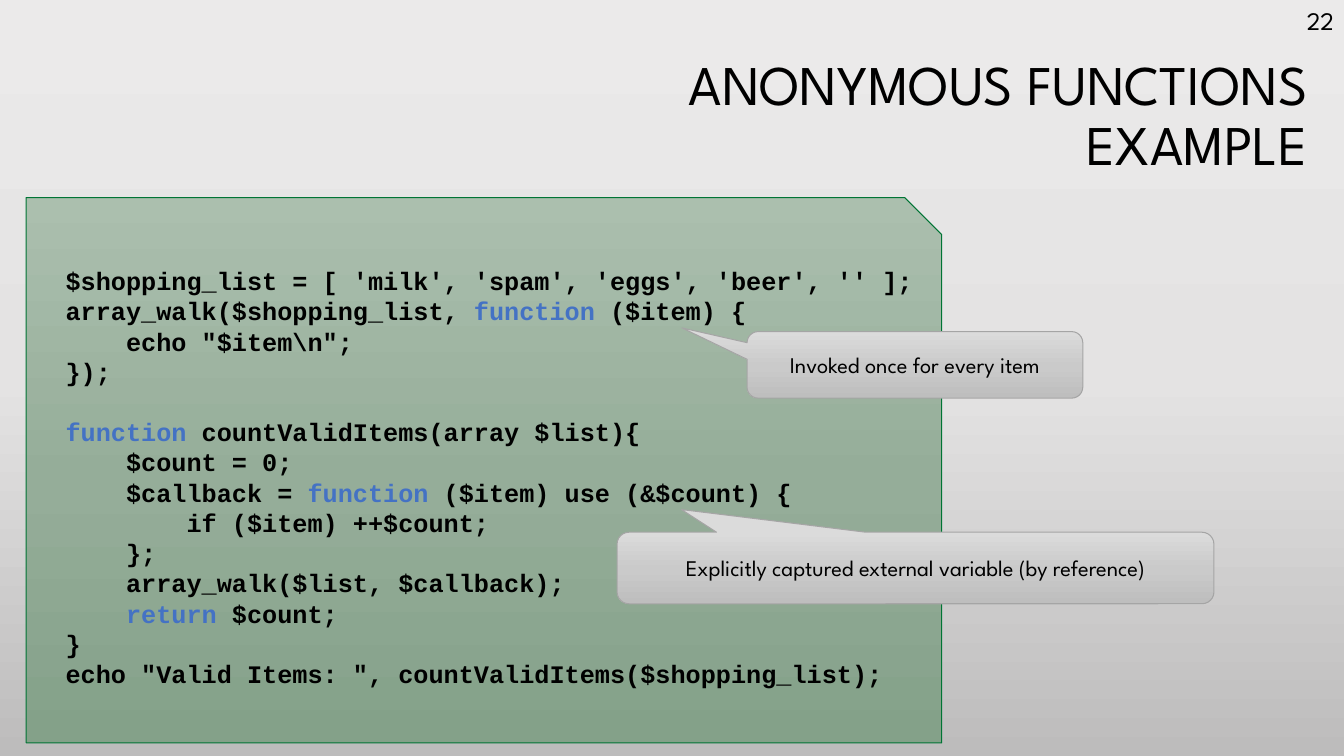
from copy import deepcopy

from pptx import Presentation
from pptx import util as u
from pptx.dml.color import RGBColor
from pptx.enum import shapes, text
from pptx.oxml import ns

COLORS = {
    "ink": "000000",
    "keyword": "4472C4",
    "code_line": "007434",
    "callout_line": "A5A5A5",
}
BACKDROP = [(0, "EBEAEA"), (0.5, "E4E3E3"), (1, "BDBCBC")]
GREEN = [(0, "ABBFAE"), (0.52, "95AD99"), (1, "84A189")]
GRAY = [(0, "DBDBDB"), (0.52, "CACACA"), (1, "BEBEBE")]
SANS, MONO = "League Spartan", "Courier New"


def write(paragraph, words, size=18, font=SANS, color="ink", bold=False, align=text.PP_ALIGN.LEFT):
    paragraph.alignment = align
    run = paragraph.add_run()
    run.text = words
    run.font.size = u.Pt(size)
    run.font.name = font
    run.font.bold = bold
    run.font.color.rgb = RGBColor.from_string(COLORS[color])


def shade(fill, owner, stops):
    fill.gradient()
    fill.gradient_angle = 270
    stop_list = next(owner.iter(ns.qn("a:gsLst")))
    stop_list.insert(1, deepcopy(stop_list[0]))
    for stop, (position, color) in zip(fill.gradient_stops, stops):
        stop.position = position
        stop.color.rgb = RGBColor.from_string(color)


deck = Presentation()
deck.slide_width, deck.slide_height = u.Inches(13.33), u.Inches(7.5)
slide = deck.slides.add_slide(deck.slide_layouts[5])
shade(slide.background.fill, slide.element, BACKDROP)

heading = slide.shapes.title
heading.left, heading.top = u.Inches(0.26), u.Inches(0.46)
heading.width, heading.height = u.Inches(12.81), u.Inches(1.41)
heading.text_frame.auto_size = text.MSO_AUTO_SIZE.NONE
heading.text_frame.vertical_anchor = text.MSO_ANCHOR.MIDDLE
heading_line = heading.text_frame.paragraphs[0]
heading_line.line_spacing = 0.9
write(heading_line, "ANONYMOUS FUNCTIONS", size=40, align=text.PP_ALIGN.RIGHT)
heading_line.add_line_break()
write(heading_line, "EXAMPLE", size=40, align=text.PP_ALIGN.RIGHT)

page_number = slide.shapes.add_textbox(u.Inches(10.45), 0, u.Inches(2.88), u.Inches(0.4))
page_number.text_frame.word_wrap = True
page_number.text_frame.vertical_anchor = text.MSO_ANCHOR.MIDDLE
write(page_number.text_frame.paragraphs[0], "22", align=text.PP_ALIGN.RIGHT)

panels = []
for kind, box, adjustments, stops, line_color in [
    (shapes.MSO_SHAPE.SNIP_1_RECTANGLE, (0.26, 1.96, 9.08, 5.41), (0.068,), GREEN, "code_line"),
    (shapes.MSO_SHAPE.ROUNDED_RECTANGULAR_CALLOUT, (7.41, 3.29, 3.33, 0.66),
     (-0.694, -0.556, 0.167), GRAY, "callout_line"),
    (shapes.MSO_SHAPE.ROUNDED_RECTANGULAR_CALLOUT, (6.12, 5.28, 5.92, 0.71),
     (-0.392, -0.817, 0.167), GRAY, "callout_line"),
]:
    panel = slide.shapes.add_shape(kind, *map(u.Inches, box))
    panel.shadow.inherit = False
    for index, value in enumerate(adjustments):
        panel.adjustments[index] = value
    shade(panel.fill, panel.element, stops)
    panel.line.color.rgb = RGBColor.from_string(COLORS[line_color])
    panel.line.width = u.Pt(0.75)
    panel.text_frame.word_wrap = True
    panel.text_frame.vertical_anchor = text.MSO_ANCHOR.MIDDLE
    panels.append(panel.text_frame)

code, *callouts = panels
code.margin_left, code.margin_top = u.Inches(0.39), 0
code.margin_right, code.margin_bottom = u.Inches(0.1), u.Inches(0.05)

CODE_LINES = [
    (0, "$shopping_list = [ 'milk', 'spam', 'eggs', 'beer', '' ];"),
    (0, "array_walk($shopping_list, |function| ($item) {"),
    (1, 'echo "$item\\n";'),
    (0, "});"),
    (0, "|function |countValidItems(array $list){"),
    (1, "$count = 0;"),
    (1, "$callback = |function| ($item) use (&$count) {"),
    (2, "if ($item) ++$count;"),
    (1, "};"),
    (1, "array_walk($list, $callback);"),
    (1, "|return| $count;"),
    (0, "}"),
    (0, 'echo "Valid Items: ", countValidItems($shopping_list);'),
]
for number, (depth, source) in enumerate(CODE_LINES):
    code_line = code.add_paragraph() if number else code.paragraphs[0]
    for index, part in enumerate(source.split("|")):
        if part:
            write(code_line, part, font=MONO, bold=True, color="keyword" if index % 2 else "ink")
    code_line._p.get_or_add_pPr().set("marL", str(u.Inches(0.6 * depth)))
    if source.startswith("|function"):
        code_line.space_before = u.Pt(21.6)

for callout, remark in zip(callouts, [
    "Invoked once for every item",
    "Explicitly captured external variable (by reference)",
]):
    write(callout.paragraphs[0], remark, size=16, align=text.PP_ALIGN.CENTER)

deck.save("out.pptx")
